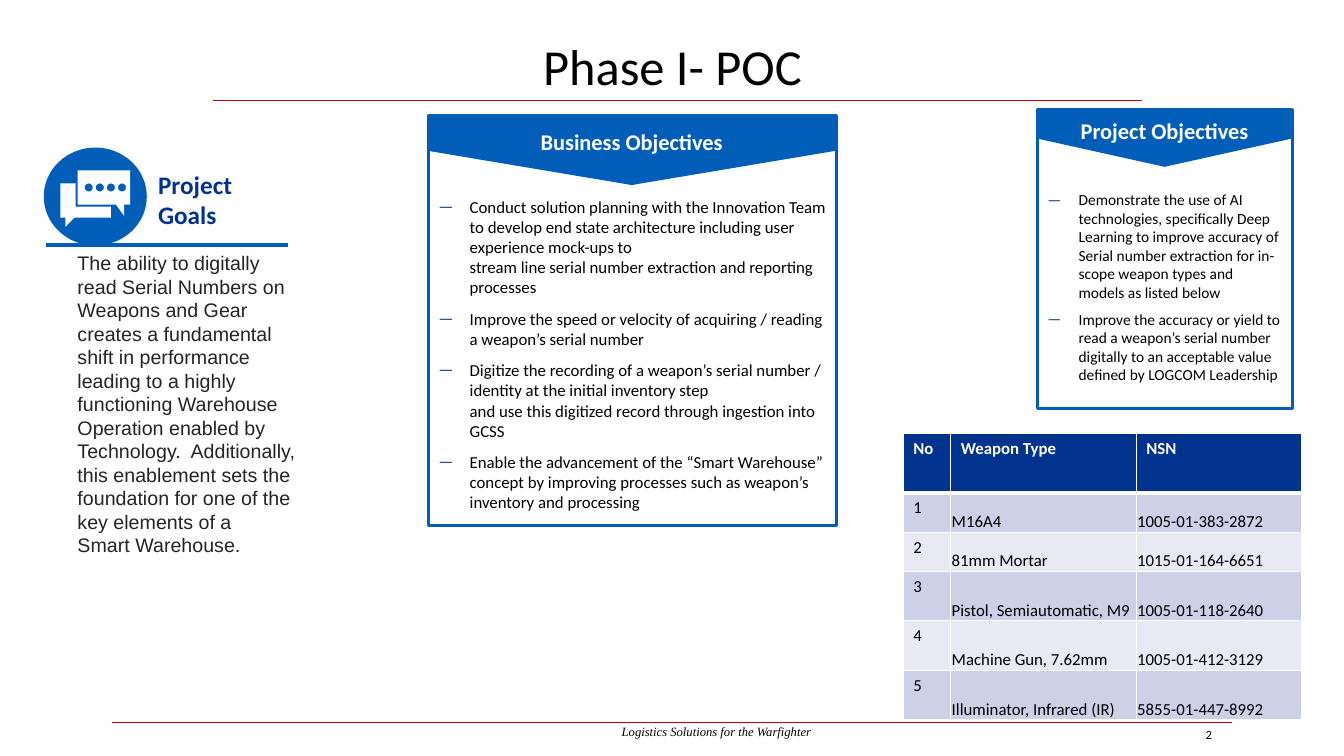
"""Build the Phase I project goals and objectives slide."""
from dataclasses import dataclass
from math import cos, pi, sin

from lxml.etree import SubElement
from pptx import Presentation
from pptx.dml.color import RGBColor
from pptx.enum.shapes import MSO_CONNECTOR, MSO_SHAPE
from pptx.enum.text import MSO_ANCHOR, MSO_AUTO_SIZE, PP_ALIGN
from pptx.oxml.ns import qn
from pptx.util import Inches, Pt


@dataclass(frozen=True)
class Theme:
    blue: str = "005EB8"
    navy: str = "00338D"
    red: str = "C00000"
    white: str = "FFFFFF"
    black: str = "000000"
    ink: str = "242426"
    bands: tuple = ("CED0E7", "E8E9F3")
    sans: str = "Calibri"
    plain: str = "Arial"
    serif: str = "Times New Roman"
    title: int = 36
    goal: int = 18
    banner: int = 16
    body: int = 14
    item: int = 12
    small: int = 11
    foot: int = 9


LOOK = Theme()
GOAL = (
    "The ability to digitally read Serial Numbers on Weapons and Gear creates a "
    "fundamental shift in performance leading to a highly functioning Warehouse "
    "Operation enabled by Technology.  Additionally, this enablement sets the "
    "foundation for one of the key elements of a \nSmart Warehouse."
)
BUSINESS = [
    "Conduct solution planning with the Innovation Team to develop end state "
    "architecture including user experience mock-ups to \nstream line serial number "
    "extraction and reporting processes",
    "Improve the speed or velocity of acquiring / reading a weapon’s serial number",
    "Digitize the recording of a weapon’s serial number / identity at the initial "
    "inventory step \nand use this digitized record through ingestion into GCSS",
    "Enable the advancement of the “Smart Warehouse” concept by improving processes "
    "such as weapon’s inventory and processing",
]
PROJECT = [
    "Demonstrate the use of AI technologies, specifically Deep Learning to improve "
    "accuracy of Serial number extraction for in-scope weapon types and models as "
    "listed below",
    "Improve the accuracy or yield to read a weapon’s serial number digitally to an "
    "acceptable value defined by LOGCOM Leadership",
]
WEAPONS = [
    ("No", "Weapon Type", "NSN"),
    ("1", "M16A4", "1005-01-383-2872"),
    ("2", "81mm Mortar", "1015-01-164-6651"),
    ("3", "Pistol, Semiautomatic, M9", "1005-01-118-2640"),
    ("4", "Machine Gun, 7.62mm", "1005-01-412-3129"),
    ("5", "Illuminator, Infrared (IR)", "5855-01-447-8992"),
]


def hue(code):
    """Turn a hex code into a colour."""
    return RGBColor.from_string(code)


def place(box):
    """Turn left, top, width and height into lengths."""
    return [Inches(n) for n in box]


def dash(para):
    """Give a paragraph a hanging dash."""
    para.level = 2
    props = para._p.get_or_add_pPr()
    props.set("marL", str(Inches(0.31)))
    props.set("indent", str(-Inches(0.31)))
    SubElement(SubElement(props, qn("a:buClr")), qn("a:srgbClr"), val=LOOK.navy)
    SubElement(props, qn("a:buFont"), typeface=LOOK.sans)
    SubElement(props, qn("a:buChar"), char="—")


def write(frame, *texts, size=LOOK.item, color=LOOK.black, font=LOOK.sans, bold=False,
          italic=False, align=PP_ALIGN.LEFT, after=0, bullet=False):
    """Write formatted paragraphs into a text frame."""
    for i, text in enumerate(texts):
        para = frame.add_paragraph() if i else frame.paragraphs[0]
        para.text = text
        if bullet:
            dash(para)
        para.alignment = align
        para.space_after = Pt(after)
        for run in para.runs:
            run.font.size, run.font.name = Pt(size), font
            run.font.bold, run.font.italic = bold, italic
            run.font.color.rgb = hue(color)


def label(slide, box, text, anchor=MSO_ANCHOR.TOP, **style):
    """Add a wrapped text box."""
    frame = slide.shapes.add_textbox(*place(box)).text_frame
    frame.word_wrap = True
    frame.vertical_anchor = anchor
    write(frame, text, **style)


def rule(slide, left, right, y, color=LOOK.red, width=1):
    """Draw a level line."""
    line = slide.shapes.add_connector(
        MSO_CONNECTOR.STRAIGHT, *place((left, y, right, y)))
    line.line.color.rgb = hue(color)
    line.line.width = Pt(width)
    SubElement(line._element.spPr, qn("a:effectLst"))


def solid(shape, color):
    """Fill a shape without outline or shadow."""
    shape.shadow.inherit = False
    shape.fill.solid()
    shape.fill.fore_color.rgb = hue(color)
    shape.line.fill.background()


def edge(shape, width):
    """Outline a shape in blue."""
    shape.line.color.rgb = hue(LOOK.blue)
    shape.line.width = Pt(width)


def banner(slide, box, text):
    """Add a headed pennant that points down."""
    left, top, width, height = box
    turned = (left + (width - height) / 2, top + (height - width) / 2, height, width)
    shape = slide.shapes.add_shape(MSO_SHAPE.PENTAGON, *place(turned))
    solid(shape, LOOK.blue)
    edge(shape, 0.75)
    shape.rotation = 90
    shape._element.spPr.xfrm.set("flipV", "1")
    frame = shape.text_frame
    frame._txBody.bodyPr.set("vert", "vert")
    frame.vertical_anchor = MSO_ANCHOR.MIDDLE
    write(frame, text, size=LOOK.banner, color=LOOK.white, bold=True,
          align=PP_ALIGN.CENTER)


def panel(slide, box, items, **style):
    """Add an outlined panel of dashed items."""
    shape = slide.shapes.add_shape(MSO_SHAPE.RECTANGLE, *place(box))
    shape.shadow.inherit = False
    shape.fill.background()
    edge(shape, 2.25)
    frame = shape.text_frame
    frame.word_wrap = True
    frame.vertical_anchor = MSO_ANCHOR.TOP
    frame.margin_top = Inches(0.8)
    write(frame, *items, bullet=True, **style)


def outline(group, *loops):
    """Draw a white shape from closed loops."""
    paths = [[place(dot) for dot in loop] for loop in loops]
    pen = group.shapes.build_freeform(*paths[0][0], scale=1.0)
    pen.add_line_segments(paths[0][1:], close=True)
    for path in paths[1:]:
        pen.move_to(*path[0])
        pen.add_line_segments(path[1:], close=True)
    solid(pen.convert_to_shape(), LOOK.white)


def ring(x, y, r, count=24):
    """List the points of a circle."""
    turns = [2 * pi * i / count for i in range(count)]
    return [(x + r * cos(t), y + r * sin(t)) for t in turns]


def icon(slide):
    """Draw the chat icon on its disc."""
    disc = slide.shapes.add_shape(MSO_SHAPE.OVAL, *place((0.45, 1.48, 0.99, 0.94)))
    solid(disc, LOOK.blue)
    edge(disc, 2.25)
    group = slide.shapes.add_group_shape()
    outline(group, [(0.65, 2.25), (0.74, 2.16), (1.1, 2.16), (1.1, 2.05), (0.75, 2.05),
                    (0.75, 1.82), (0.6, 1.82), (0.6, 2.16), (0.65, 2.16)])
    bubble = [(1.15, 2.03), (1.23, 2.14), (1.23, 2.03), (1.29, 2.03), (1.29, 1.69),
              (0.77, 1.69), (0.77, 2.03)]
    outline(group, bubble, *[ring(0.88 + 0.11 * i, 1.86, 0.04) for i in range(4)])


def border(cell, row):
    """Give a cell white borders, heavy under the header."""
    props = cell._tc.get_or_add_tcPr()
    heavy = {(0, "B"), (1, "T")}
    for side in "LRTB":
        width = Pt(3 if (row, side) in heavy else 1)
        line = SubElement(props, qn(f"a:ln{side}"), w=str(width))
        SubElement(SubElement(line, qn("a:solidFill")), qn("a:srgbClr"), val=LOOK.white)


def grid(slide):
    """Add the weapon table."""
    table = slide.shapes.add_table(
        len(WEAPONS), 3, *place((8.96, 4.3, 3.95, 2.84))).table
    for col, width in zip(table.columns, (0.47, 1.84, 1.64)):
        col.width = Inches(width)
    for i, (row, height) in enumerate(zip(table.rows, (0.59, 0.39, 0.39, 0.49, 0.49, 0.49))):
        row.height = Inches(height)
        for j, cell in enumerate(row.cells):
            border(cell, i)
            cell.fill.solid()
            cell.fill.fore_color.rgb = hue(LOOK.bands[(i - 1) % 2] if i else LOOK.navy)
            if i and j:
                cell.vertical_anchor = MSO_ANCHOR.BOTTOM
                cell.margin_left = cell.margin_right = cell.margin_top = Inches(0.01)
                cell.margin_bottom = 0
            write(cell.text_frame, WEAPONS[i][j], bold=not i,
                  color=LOOK.black if i else LOOK.white)


def head(slide, text):
    """Place and format the title."""
    title = slide.shapes.title
    title.left, title.top, title.width, title.height = place((2.17, 0.3, 9, 0.63))
    title.text_frame.auto_size = MSO_AUTO_SIZE.NONE
    title.text_frame.vertical_anchor = MSO_ANCHOR.TOP
    write(title.text_frame, text, size=LOOK.title, align=PP_ALIGN.CENTER)


def main():
    """Build and save the slide."""
    deck = Presentation()
    deck.slide_width, deck.slide_height = Inches(13.33), Inches(7.5)
    slide = deck.slides.add_slide(deck.slide_layouts[5])
    head(slide, "Phase I- POC")
    label(slide, (4.44, 7.13, 5.33, 0.25), "Logistics Solutions for the Warfighter",
          size=LOOK.foot, font=LOOK.serif, italic=True, align=PP_ALIGN.CENTER)
    label(slide, (11.56, 7.16, 0.56, 0.25), "2", size=LOOK.foot, align=PP_ALIGN.RIGHT)
    rule(slide, 1.11, 12.22, 7.17)
    rule(slide, 2.11, 11.33, 1)
    rule(slide, 0.46, 2.86, 2.43, LOOK.blue, 2.25)
    icon(slide)
    label(slide, (1.47, 1.79, 1.8, 0.37), "Project \nGoals", MSO_ANCHOR.MIDDLE,
          size=LOOK.goal, color=LOOK.navy, bold=True)
    label(slide, (0.67, 2.44, 2.41, 3.16), GOAL, size=LOOK.body, color=LOOK.ink,
          font=LOOK.plain, after=6)
    banner(slide, (4.24, 1.15, 4.05, 0.68), "Business Objectives")
    banner(slide, (10.29, 1.09, 2.52, 0.56), "Project Objectives")
    panel(slide, (4.25, 1.15, 4.05, 4.06), BUSINESS, after=8)
    panel(slide, (10.29, 1.09, 2.53, 2.96), PROJECT, size=LOOK.small, after=6)
    grid(slide)
    deck.save("out.pptx")


if __name__ == "__main__":
    main()
